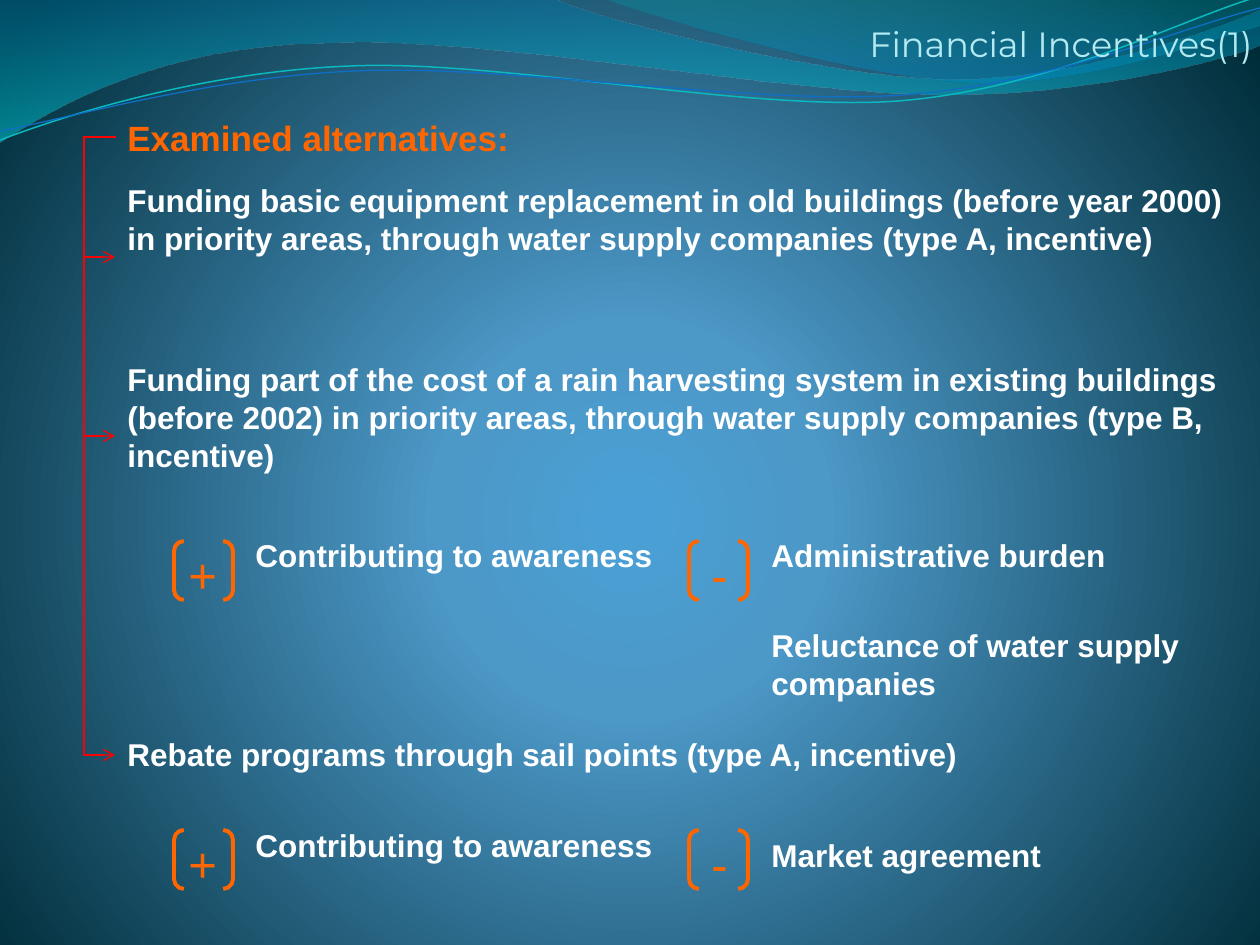
from lxml import etree
from pptx import Presentation
from pptx.dml.color import RGBColor
from pptx.enum.shapes import MSO_CONNECTOR, MSO_SHAPE
from pptx.enum.text import MSO_AUTO_SIZE, PP_ALIGN
from pptx.oxml import parse_xml
from pptx.oxml.ns import nsdecls, qn
from pptx.util import Pt

ELBOW = MSO_CONNECTOR.ELBOW
BRACKETS = MSO_SHAPE.DOUBLE_BRACKET
FIT = MSO_AUTO_SIZE.SHAPE_TO_FIT_TEXT
LEFT, RIGHT = PP_ALIGN.LEFT, PP_ALIGN.RIGHT

PX = 914400 // 126
WHITE = RGBColor(0xFF, 0xFF, 0xFF)
ORANGE = RGBColor(0xFF, 0x66, 0x00)
RED = RGBColor(0xFF, 0x00, 0x00)
PALE_CYAN = RGBColor(0xB3, 0xEA, 0xF2)
TEAL = RGBColor(0x0A, 0xB8, 0xBF)
BLUE = RGBColor(0x0F, 0x6F, 0xC6)

# Content: text, top in px
TITLE = "Financial Incentives(1)"
HEADING = "Examined alternatives:"
ALTERNATIVES = [
    ("Funding basic equipment replacement in old buildings (before year 2000) "
     "in priority areas, through water supply companies (type A, incentive)", 175),
    ("Funding part of the cost of a rain harvesting system in existing buildings "
     "(before 2002) in priority areas, through water supply companies "
     "(type B, incentive)", 354),
    ("Rebate programs through sail points (type A, incentive)", 729),
]
# Top of the brackets, then the arguments for and against
ASSESSMENTS = [
    (541, [("Contributing to awareness", 530)],
     [("Administrative burden", 530), ("Reluctance of water supply companies", 620)]),
    (830, [("Contributing to awareness", 820)], [("Market agreement", 830)]),
]
ARROW_START, ARROW_ENDS = 137, (257, 436, 755)
TRUNK_X, ARROW_X = 84, 115

# Wave outlines in px: a start point, then 1-point lines and 3-point curves.
# Gradient stops: position %, colour, opacity %
WAVE_FILLS = [
    ((0, 0), [
        [(554, -1)], [(600, 21), (837, 79), (955, 79)],
        [(1075, 79), (1207, 33), (1260, 11)], [(1261, 45)],
        [(1239, 55), (1096, 96), (940, 94)], [(784, 94), (481, 35), (324, 43)],
        [(163, 45), (58, 105), (-1, 142)]],
     [(0, "0074A1", 45), (100, "00C6CF", 55)]),
    ((604, -1), [
        [(641, 14), (859, 78), (969, 82)], [(1079, 87), (1211, 40), (1260, 26)],
        [(1260, 0)]],
     [(0, "00A1A9", 30), (80, "008BBF", 45)]),
]
WAVE_LINES = [
    ((0, 140), [
        [(60, 117), (199, 72), (349, 66)], [(498, 59), (747, 112), (898, 101)],
        [(1050, 89), (1182, 19), (1257, -3)]], TEAL, 0.85),
    ((0, 131), [
        [(59, 121), (207, 77), (357, 71)], [(508, 64), (752, 106), (903, 95)],
        [(1053, 84), (1186, 26), (1260, 8)]], BLUE, 0.75),
]


def gradient(stops, direction):
    gs = "".join(
        f'<a:gs pos="{pos * 1000}"><a:srgbClr val="{color}">'
        f'<a:alpha val="{opacity * 1000}"/></a:srgbClr></a:gs>'
        for pos, color, opacity in stops)
    return parse_xml(f'<a:gradFill {nsdecls("a")} rotWithShape="1">'
                     f'<a:gsLst>{gs}</a:gsLst>{direction}</a:gradFill>')


def add_background(slide):
    slide.background.fill.solid()
    solid = slide._element.find(".//" + qn("p:bgPr")).find(qn("a:solidFill"))
    stops = [(0, "4AA0D6", 100), (25, "4C98C7", 100), (100, "002C38", 100)]
    focus = ('<a:path path="circle"><a:fillToRect l="10000" t="110000" '
             'r="10000" b="100000"/></a:path>')
    solid.getparent().replace(solid, gradient(stops, focus))


def add_wave(shapes, start, segments, closed):
    builder = shapes.build_freeform(*start, scale=PX)
    builder.add_line_segments([pt for seg in segments for pt in seg], close=closed)
    wave = builder.convert_to_shape()
    wave.shadow.inherit = False
    # Join each three points of a curve into one Bezier segment
    steps = iter(wave._element.findall(".//" + qn("a:lnTo")))
    for segment in segments:
        group = [next(steps) for _ in segment]
        if len(group) == 3:
            curve = etree.Element(qn("a:cubicBezTo"))
            group[0].addprevious(curve)
            for step in group:
                curve.append(step[0])
                step.getparent().remove(step)
    return wave


def add_text(shapes, text, left, top, width, height, size=18, color=WHITE,
             bold=True, font="Arial", align=LEFT, wrap=True):
    box = shapes.add_textbox(*(v * PX for v in (left, top, width, height)))
    frame = box.text_frame
    frame.word_wrap, frame.auto_size = wrap, FIT
    paragraph = frame.paragraphs[0]
    paragraph.alignment = align
    run = paragraph.add_run()
    run.text = text
    run.font.name, run.font.size, run.font.bold = font, Pt(size), bold
    run.font.color.rgb = color


def add_arrow(shapes, end_y):
    start_x = ARROW_X + 1
    arrow = shapes.add_connector(
        ELBOW, start_x * PX, ARROW_START * PX, ARROW_X * PX, end_y * PX)
    arrow.line.color.rgb, arrow.line.width = RED, Pt(0.75)
    properties = arrow._element.spPr
    # The bend lies left of both ends, at the shared trunk
    geometry = properties.find(qn("a:prstGeom"))
    guides = geometry.find(qn("a:avLst"))
    if guides is None:
        guides = etree.SubElement(geometry, qn("a:avLst"))
    bend = (start_x - TRUNK_X) * 100000
    etree.SubElement(guides, qn("a:gd"), name="adj1", fmla=f"val {bend}")
    etree.SubElement(properties.find(qn("a:ln")), qn("a:tailEnd"), type="arrow")
    etree.SubElement(properties, qn("a:effectLst"))


def add_sign(shapes, sign, left, top, sign_left, sign_width):
    pair = shapes.add_shape(BRACKETS, left * PX, top * PX, 59 * PX, 59 * PX)
    pair.shadow.inherit = False
    pair.fill.background()
    pair.line.color.rgb, pair.line.width = ORANGE, Pt(2.25)
    add_text(shapes, sign, sign_left, top - 3, sign_width, 72, size=28,
             color=ORANGE, bold=False, wrap=False)


def main():
    prs = Presentation()
    prs.slide_width, prs.slide_height = 1260 * PX, 945 * PX
    slide = prs.slides.add_slide(prs.slide_layouts[6])
    shapes = slide.shapes

    # Background and waves
    add_background(slide)
    for start, segments, stops in WAVE_FILLS:
        wave = add_wave(shapes, start, segments, True)
        wave.line.fill.background()
        wave._element.spPr.find(qn("a:custGeom")).addnext(
            gradient(stops, '<a:lin ang="5400000" scaled="0"/>'))
    for start, segments, color, weight in WAVE_LINES:
        wave = add_wave(shapes, start, segments, False)
        wave.fill.background()
        wave.line.color.rgb, wave.line.width = color, Pt(weight)

    # Title, heading and alternatives
    add_text(shapes, TITLE, 323, 16, 942, 55, size=20, color=PALE_CYAN,
             bold=False, font="Montserrat", align=RIGHT)
    add_text(shapes, HEADING, 115, 110, 814, 55, size=20, color=ORANGE)
    for text, top in ALTERNATIVES:
        add_text(shapes, text, 115, top, 1137, 90)
    for end_y in ARROW_ENDS:
        add_arrow(shapes, end_y)

    # Arguments for and against
    for top, pros, cons in ASSESSMENTS:
        add_sign(shapes, "+", 174, top, 176, 73)
        add_sign(shapes, "-", 689, top, 699, 53)
        for arguments, left in ((pros, 243), (cons, 759)):
            for text, text_top in arguments:
                add_text(shapes, text, left, text_top, 525, 50)

    prs.save("out.pptx")


if __name__ == "__main__":
    main()
